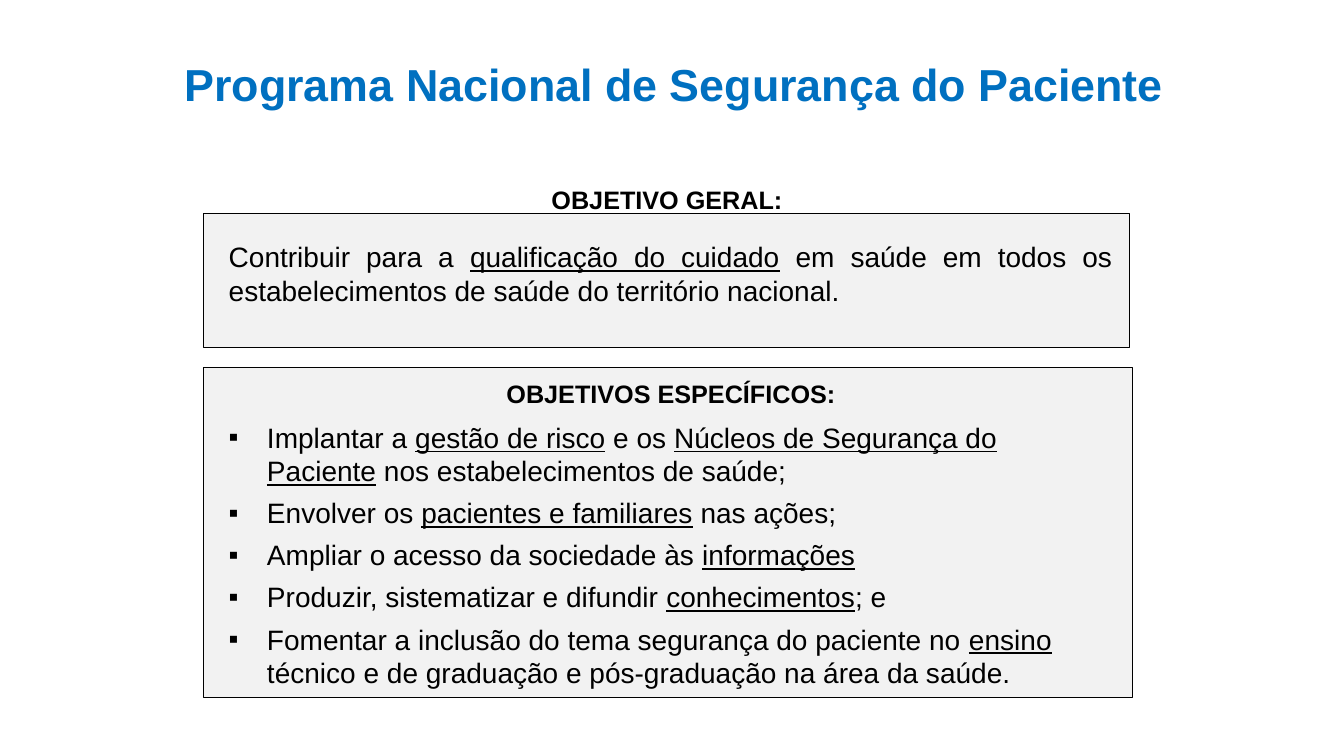
from lxml import etree
from pptx import Presentation
from pptx.dml.color import RGBColor
from pptx.enum.shapes import MSO_SHAPE
from pptx.enum.text import PP_ALIGN
from pptx.oxml.ns import qn
from pptx.util import Pt

PX = 9144  # 100 px to the inch
FONT = "Arial"
BLACK, PANEL_GREY, TITLE_BLUE = "000000", "F2F2F2", "0070C0"
LEFT, CENTER, JUSTIFY = PP_ALIGN.LEFT, PP_ALIGN.CENTER, PP_ALIGN.JUSTIFY
RECTANGLE = MSO_SHAPE.RECTANGLE
BULLET_INDENT = 38

# Underscores enclose the underlined words
GENERAL_GOAL = ("Contribuir para a _qualificação do cuidado_ em saúde em todos os "
                "estabelecimentos de saúde do território nacional.")
SPECIFIC_GOALS = [
    "Implantar a _gestão de risco_ e os _Núcleos de Segurança do Paciente_"
    " nos estabelecimentos de saúde;",
    "Envolver os _pacientes e familiares_ nas ações;",
    "Ampliar o acesso da sociedade às _informações_",
    "Produzir, sistematizar e difundir _conhecimentos_; e",
    "Fomentar a inclusão do tema segurança do paciente no _ensino_"
    " técnico e de graduação e pós-graduação na área da saúde.",
]


def color(value):
    return RGBColor.from_string(value)


def emu(*lengths):
    return [length * PX for length in lengths]


def add_panel(page, left, top, width, height):
    panel = page.shapes.add_shape(RECTANGLE, *emu(left, top, width, height))
    panel.shadow.inherit = False
    panel.fill.solid()
    panel.fill.fore_color.rgb = color(PANEL_GREY)
    panel.line.color.rgb = color(BLACK)
    panel.line.width = Pt(0.75)


def add_bullet(para):
    properties = para._p.get_or_add_pPr()
    properties.set("marL", str(BULLET_INDENT * PX))
    properties.set("indent", str(-BULLET_INDENT * PX))
    etree.SubElement(properties, qn("a:buFont"), typeface=FONT)
    etree.SubElement(properties, qn("a:buChar"), char="▪")


def add_text(page, place, lines, size, align=LEFT, bold=False, hue=BLACK, bullets=False):
    box = page.shapes.add_textbox(*emu(*place))
    frame = box.text_frame
    frame.word_wrap = True
    for index, line in enumerate(lines):
        para = frame.add_paragraph() if index else frame.paragraphs[0]
        para.alignment = align
        if bullets:
            add_bullet(para)
            para.space_before = Pt(3 if index else 0)
            para.space_after = Pt(3)
        for part, words in enumerate(line.split("_")):
            if not words:
                continue
            span = para.add_run()
            span.text = words
            span.font.name = FONT
            span.font.size = Pt(size)
            span.font.bold = bold
            span.font.underline = part % 2 == 1
            span.font.color.rgb = color(hue)


def main():
    deck = Presentation()
    deck.slide_width, deck.slide_height = emu(1333, 750)
    page = deck.slides.add_slide(deck.slide_layouts[6])

    # General objective
    add_panel(page, 202, 212, 918, 133)
    add_text(page, (484, 178, 362, 40), ["OBJETIVO GERAL: "], 18, CENTER, bold=True)
    add_text(page, (217, 233, 896, 77), [GENERAL_GOAL], 20, JUSTIFY)

    # Specific objectives
    add_panel(page, 202, 365, 921, 327)
    add_text(page, (217, 412, 896, 279), SPECIFIC_GOALS, 20, bullets=True)
    add_text(page, (438, 370, 462, 40), ["OBJETIVOS ESPECÍFICOS: "], 18, CENTER, bold=True)

    # Title
    add_text(page, (153, 51, 1032, 122), ["Programa Nacional de Segurança do Paciente"],
             32, CENTER, bold=True, hue=TITLE_BLUE)

    deck.save("out.pptx")


if __name__ == "__main__":
    main()
